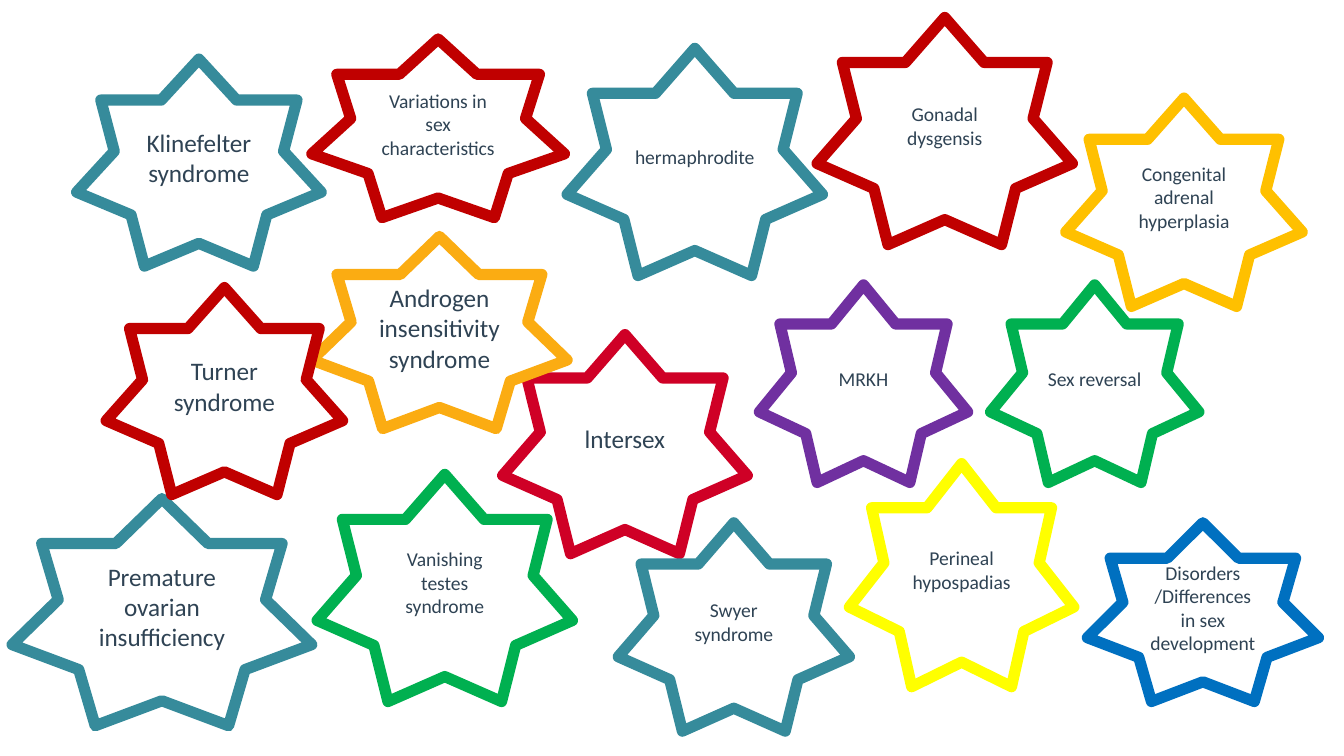
from pptx import Presentation, util as u
from pptx.dml.color import RGBColor
from pptx.enum import shapes, text
from pptx.oxml import ns
from lxml import etree

WHITE, INK = "FFFFFF", "2F4354"
TEAL, RED, GREEN = "368B9B", "C00000", "00B050"
LARGE, SMALL = 13.5, 10.5


def rgb(value):
    return RGBColor.from_string(value)


deck = Presentation()
deck.slide_width = u.Inches(10)
deck.slide_height = deck.slide_width * 9 // 16
slide = deck.slides.add_slide(deck.slide_layouts[6])

# Square grid: one cell is a hundredth of the slide's width
cell = deck.slide_width / 100

# term, text size, outline, left, top, width, height in cells; back to front
stars = [
    ("lntersex", LARGE, "CF0026", 37.4, 24.9, 18.2, 16.3),
    ("Premature ovarian insufficiency", LARGE, TEAL, 0.9, 37.1, 22.3, 16.9),
    ("Androgen insensitivity syndrome", LARGE, "FBAC12", 23.2, 17.6, 19, 14.3),
    ("Turner syndrome", LARGE, RED, 7.9, 21.4, 17.6, 15.4),
    ("hermaphrodite", SMALL, TEAL, 42.2, 3.6, 19, 16.9),
    ("Klinefelter syndrome", LARGE, TEAL, 5.7, 4.4, 18.2, 15.4),
    ("Gonadal dysgensis", SMALL, RED, 60.8, 1.3, 19, 16.9),
    ("Swyer syndrome", SMALL, TEAL, 46, 38.9, 17.2, 15.5),
    ("Sex reversal", SMALL, GREEN, 73.7, 21.2, 15.5, 14.7),
    ("Vanishing testes syndrome", SMALL, GREEN, 23.6, 35.3, 19, 16.9),
    ("Congenital adrenal hyperplasia", SMALL, "FFC000", 79.3, 7.3, 17.6, 15.5),
    ("Perineal hypospadias", SMALL, "FFFF00", 63.2, 34.5, 16.7, 16.6),
    ("Disorders /Differences in sex development", SMALL, "0070C0",
     80.9, 38.9, 17.2, 13.3),
    ("MRKH", SMALL, "7030A0", 56.5, 21.2, 15.5, 14.7),
    ("Variations in sex characteristics", SMALL, RED, 23.2, 2.9, 18.8, 13.3),
]

for term, size, outline, *box in stars:
    star = slide.shapes.add_shape(
        shapes.MSO_SHAPE.STAR_7_POINT, *(round(n * cell) for n in box))
    star.shadow.inherit = False
    star.fill.solid()
    star.fill.fore_color.rgb = rgb(WHITE)
    star.line.color.rgb = rgb(outline)
    star.line.width = u.Pt(6)
    # Rounded corners on the thick outline
    etree.SubElement(star.line._ln, ns.qn("a:round"))

    frame = star.text_frame
    frame.word_wrap = True
    frame.vertical_anchor = text.MSO_ANCHOR.MIDDLE
    frame.margin_left = frame.margin_right = round(0.7 * cell)
    frame.margin_top = frame.margin_bottom = round(0.4 * cell)
    label = frame.paragraphs[0]
    label.alignment = text.PP_ALIGN.CENTER
    run = label.add_run()
    run.text = term
    run.font.name = "Calibri"
    run.font.size = u.Pt(size)
    run.font.color.rgb = rgb(INK)

deck.save("out.pptx")
